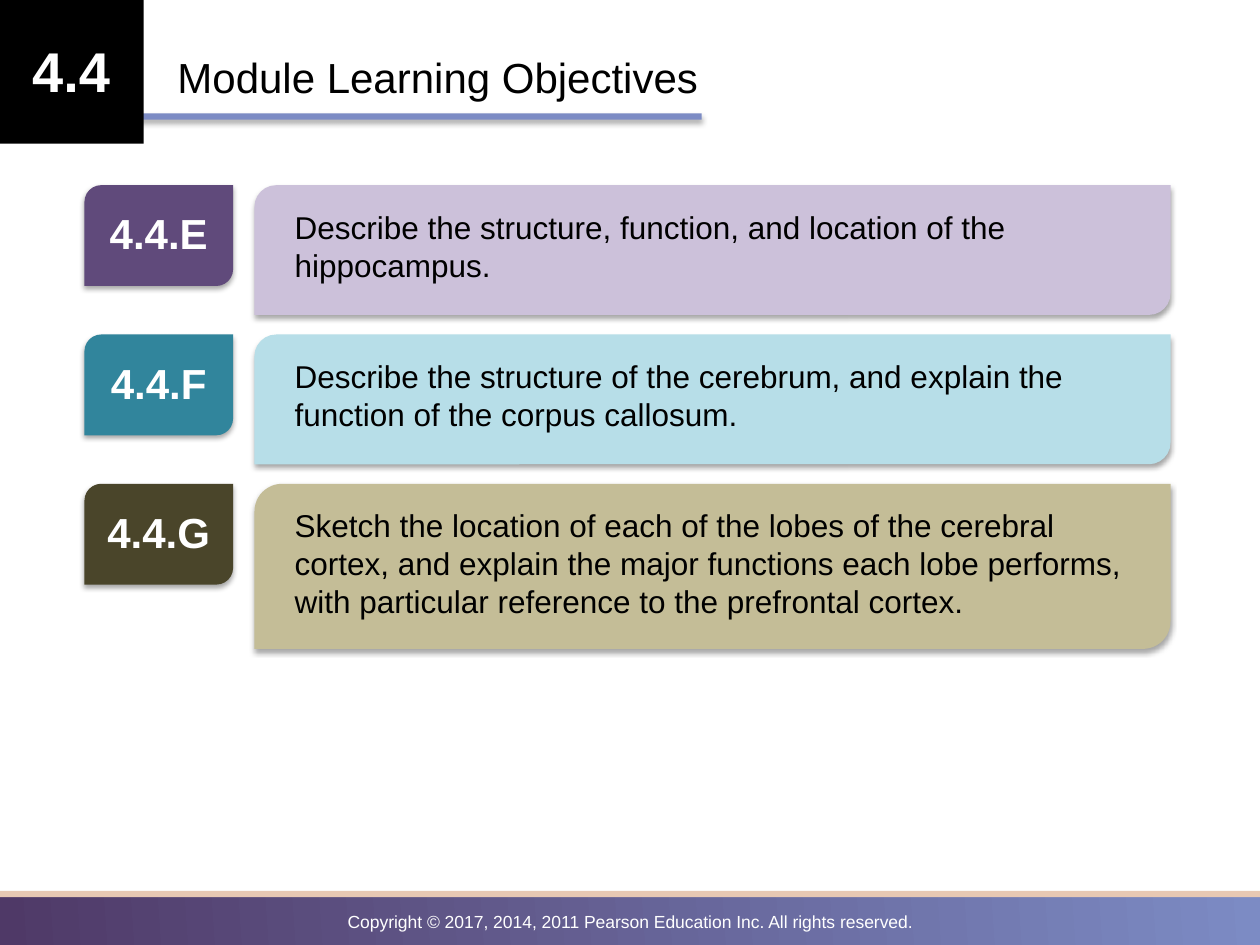
import pptx
import pptx.util
import pptx.dml.color
import pptx.enum.shapes
import pptx.enum.text
import pptx.oxml
import pptx.oxml.ns

RGBColor = pptx.dml.color.RGBColor
BLACK = RGBColor(0x00, 0x00, 0x00)
WHITE = RGBColor(0xFF, 0xFF, 0xFF)
PERIWINKLE = RGBColor(0x7C, 0x8B, 0xC4)
PLUM = RGBColor(0x4F, 0x39, 0x67)
PEACH = RGBColor(0xE7, 0xC8, 0xB3)

RECTANGLE = pptx.enum.shapes.MSO_SHAPE.RECTANGLE
DIAGONAL = pptx.enum.shapes.MSO_SHAPE.ROUND_2_DIAG_RECTANGLE
LEFT = pptx.enum.text.PP_ALIGN.LEFT
CENTER = pptx.enum.text.PP_ALIGN.CENTER

# The slide is a grid of 100 columns by 75 rows
COLUMNS, ROWS = 100, 75
FIRST_ROW, ROW_PITCH, TEXT_DROP = 14.7, 11.85, 1.3

# Label, label colour, panel colour, panel rows, text rows, wording
OBJECTIVES = [
    ("4.4.E", RGBColor(0x60, 0x4A, 0x7B), RGBColor(0xCC, 0xC1, 0xDA), 10.3, 7.1,
     "Describe the structure, function, and location of the hippocampus."),
    ("4.4.F", RGBColor(0x31, 0x85, 0x9C), RGBColor(0xB7, 0xDE, 0xE8), 10.3, 7.1,
     "Describe the structure of the cerebrum, and explain the function of "
     "the corpus callosum."),
    ("4.4.G", RGBColor(0x4A, 0x45, 0x2A), RGBColor(0xC4, 0xBD, 0x97), 13.1, 10.1,
     "Sketch the location of each of the lobes of the cerebral cortex, and "
     "explain the major functions each lobe performs, with particular "
     "reference to the prefrontal cortex."),
]

SHADOW = (
    f'<a:outerShdw {pptx.oxml.ns.nsdecls("a")} blurRad="40000" dist="23000" '
    'dir="5400000" rotWithShape="0"><a:srgbClr val="000000">'
    '<a:alpha val="35000"/></a:srgbClr></a:outerShdw>'
)


def write_text(frame, text, size=18, color=BLACK, bold=False, align=LEFT, font="Arial"):
    para = frame.paragraphs[0]
    para.alignment = align
    span = para.add_run()
    span.text = text
    span.font.name = font
    span.font.size = pptx.util.Pt(size)
    span.font.bold = bold
    span.font.color.rgb = color


class SlideBuilder:
    def __init__(self, deck):
        self.page = deck.slides.add_slide(deck.slide_layouts[6])
        self.column = deck.slide_width / COLUMNS
        self.row = deck.slide_height / ROWS

    def place(self, left, top, width, height):
        return (round(left * self.column), round(top * self.row),
                round(width * self.column), round(height * self.row))

    def block(self, area, color, kind=RECTANGLE, shadow=False):
        shape = self.page.shapes.add_shape(kind, *self.place(*area))
        shape.fill.solid()
        shape.fill.fore_color.rgb = color
        shape.line.fill.background()
        shape.shadow.inherit = False
        if shadow:
            effects = shape._element.spPr.find(pptx.oxml.ns.qn("a:effectLst"))
            effects.append(pptx.oxml.parse_xml(SHADOW))
        return shape

    def gradient_block(self, area, start, end, angle):
        shape = self.block(area, start)
        shape.fill.gradient()
        shape.fill.gradient_angle = angle
        for stop, color in zip(shape.fill.gradient_stops, (start, end)):
            stop.color.rgb = color
        return shape

    def text(self, area, text, **style):
        box = self.page.shapes.add_textbox(*self.place(*area))
        box.text_frame.word_wrap = True
        box.text_frame.auto_size = pptx.enum.text.MSO_AUTO_SIZE.SHAPE_TO_FIT_TEXT
        write_text(box.text_frame, text, **style)
        return box

    def group(self, *members):
        self.page.shapes.add_group_shape(members)

    def objective(self, top, label, label_color, panel_color, panel_rows, text_rows, wording):
        text_top = top + TEXT_DROP
        self.group(
            self.block((6.7, top, 11.8, 8), label_color, DIAGONAL, shadow=True),
            self.text((6.7, text_top, 11.8, 5), label,
                      size=24, color=WHITE, bold=True, align=CENTER))
        self.group(
            self.block((20.2, top, 72.7, panel_rows), panel_color, DIAGONAL, shadow=True),
            self.text((22.4, text_top, 69.9, text_rows), wording))


def main():
    deck = pptx.Presentation()
    deck.slide_width = pptx.util.Inches(10)
    deck.slide_height = pptx.util.Inches(7.5)
    slide = SlideBuilder(deck)

    # Footer band
    slide.gradient_block((0, 70.8, 100, 4.5), PLUM, PERIWINKLE, angle=4)
    slide.block((0, 70.7, 100.5, 0.5), PEACH)
    slide.text((0, 71.8, 100, 2.7),
               "Copyright © 2017, 2014, 2011 Pearson Education Inc. All rights reserved.",
               size=10, color=WHITE, align=CENTER)

    # Title with module number
    slide.block((-2, 9, 57.7, 0.5), PERIWINKLE, shadow=True)
    slide.group(
        slide.block((-0.1, -0.1, 11.5, 11.5), BLACK),
        slide.text((-0.1, 2.4, 11.5, 6.4), "4.4",
                   size=32, color=WHITE, bold=True, align=CENTER))
    slide.text((13.1, 3.6, 77.1, 5), "Module Learning Objectives", size=24)

    # Learning objectives
    for index, objective in enumerate(OBJECTIVES):
        slide.objective(FIRST_ROW + index * ROW_PITCH, *objective)

    deck.save("out.pptx")


if __name__ == "__main__":
    main()
